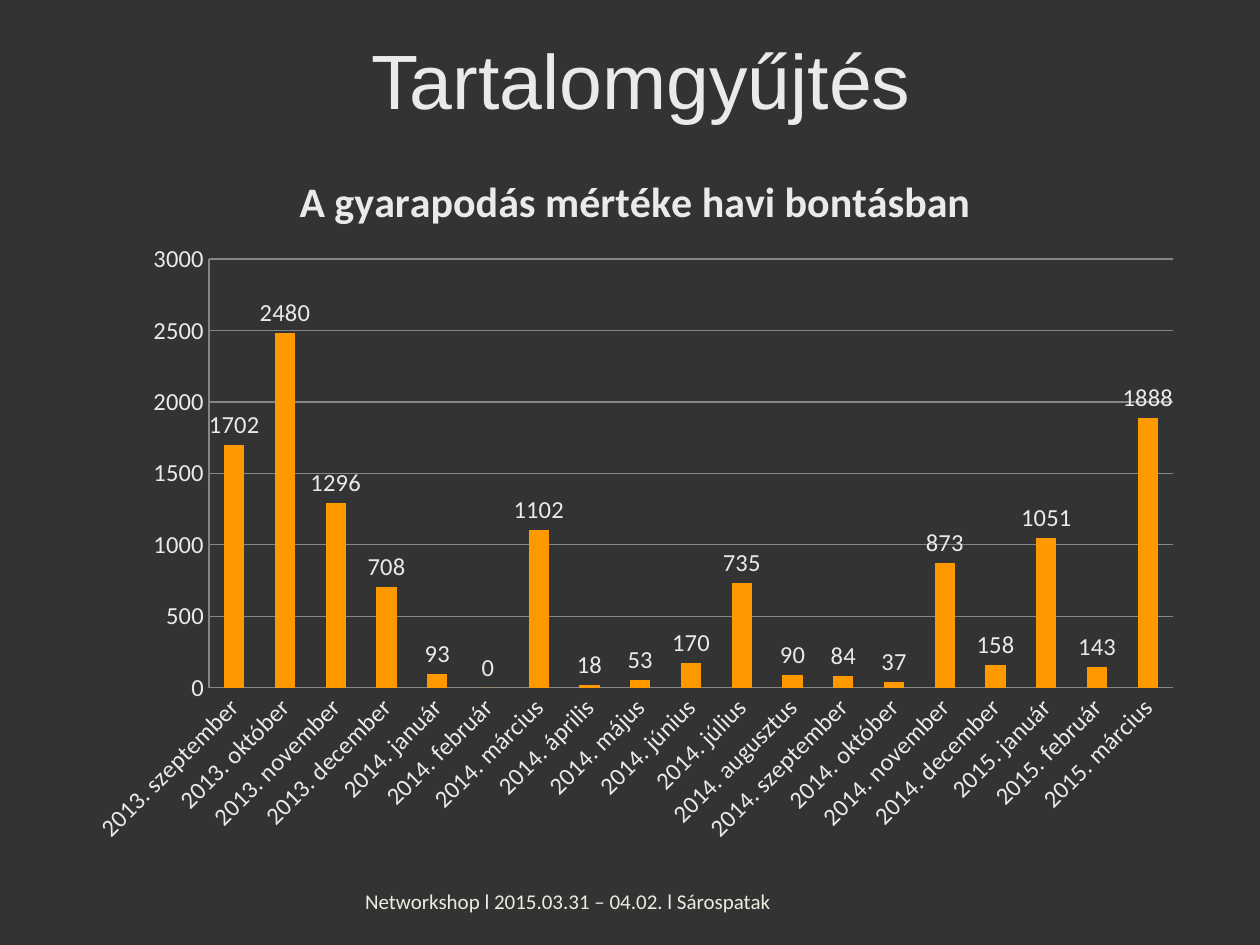
import pptx
import pptx.chart.data
import pptx.dml.color
import pptx.enum.chart
import pptx.enum.text
import pptx.oxml
import pptx.util
from pptx.dml.color import RGBColor
from pptx.util import Inches

BACKGROUND = RGBColor(0x33, 0x33, 0x33)
LIGHT = RGBColor(0xEA, 0xEA, 0xEA)
CREAM = RGBColor(0xEE, 0xEC, 0xE1)
ORANGE = RGBColor(0xFF, 0x99, 0x00)
GRAY = RGBColor(0x86, 0x86, 0x86)

TITLE = "Tartalomgyűjtés"
FOOTER = "Networkshop l 2015.03.31 – 04.02. l Sárospatak"
CHART_TITLE = "A gyarapodás mértéke havi bontásban"
MONTHLY_GROWTH = [
    ("2013. szeptember", 1702), ("2013. október", 2480),
    ("2013. november", 1296), ("2013. december", 708),
    ("2014. január", 93), ("2014. február", 0),
    ("2014. március", 1102), ("2014. április", 18),
    ("2014. május", 53), ("2014. június", 170),
    ("2014. július", 735), ("2014. augusztus", 90),
    ("2014. szeptember", 84), ("2014. október", 37),
    ("2014. november", 873), ("2014. december", 158),
    ("2015. január", 1051), ("2015. február", 143),
    ("2015. március", 1888),
]
PLOT_AREA = {"x": 0.12, "y": 0.16, "w": 0.86, "h": 0.6}


def style_font(font, size, color, name="Calibri", bold=False):
    font.size = pptx.util.Pt(size)
    font.color.rgb = color
    font.name = name
    font.bold = bold


def fill_text(shape, text, size, color, name, align):
    frame = shape.text_frame
    frame.word_wrap = True
    frame.vertical_anchor = pptx.enum.text.MSO_ANCHOR.MIDDLE
    para = frame.paragraphs[0]
    para.text = text
    para.alignment = align
    style_font(para.font, size, color, name)


def style_line(line):
    line.color.rgb = GRAY
    line.width = pptx.util.Pt(0.75)


def place_plot(chart):
    namespace = pptx.oxml.ns.nsdecls("c")
    parts = "".join(f'<c:{key}Mode val="edge"/>' for key in "xy")
    parts += "".join(f'<c:{key} val="{value}"/>' for key, value in PLOT_AREA.items())
    layout = pptx.oxml.parse_xml(
        f'<c:layout {namespace}><c:manualLayout><c:layoutTarget val="inner"/>'
        f"{parts}</c:manualLayout></c:layout>"
    )
    plot_area = chart.element.find(".//" + pptx.oxml.ns.qn("c:plotArea"))
    for old in plot_area.findall(pptx.oxml.ns.qn("c:layout")):
        plot_area.remove(old)
    plot_area.insert(0, layout)


def add_growth_chart(page):
    data = pptx.chart.data.CategoryChartData()
    data.categories = [month for month, count in MONTHLY_GROWTH]
    data.add_series("Series 1", [count for month, count in MONTHLY_GROWTH])
    chart = page.shapes.add_chart(
        pptx.enum.chart.XL_CHART_TYPE.COLUMN_CLUSTERED,
        Inches(0.59), Inches(1.15), Inches(8.9), Inches(5.67), data,
    ).chart
    style_font(chart.font, 14, LIGHT)
    chart.has_legend = False
    chart.has_title = True
    heading = chart.chart_title.text_frame.paragraphs[0]
    heading.text = CHART_TITLE
    style_font(heading.runs[0].font, 24, LIGHT, bold=True)
    chart.chart_title.include_in_layout = False

    for axis in (chart.category_axis, chart.value_axis):
        axis.major_tick_mark = pptx.enum.chart.XL_TICK_MARK.NONE
        axis.minor_tick_mark = pptx.enum.chart.XL_TICK_MARK.NONE
        style_font(axis.tick_labels.font, 14, LIGHT)
        style_line(axis.format.line)
    label_body = chart.category_axis._element.find(
        pptx.oxml.ns.qn("c:txPr")).find(pptx.oxml.ns.qn("a:bodyPr"))
    label_body.set("rot", str(-45 * 60000))
    label_body.set("vert", "horz")
    chart.value_axis.minimum_scale = 0
    chart.value_axis.maximum_scale = 3000
    chart.value_axis.major_unit = 500
    chart.value_axis.has_major_gridlines = True
    style_line(chart.value_axis.major_gridlines.format.line)

    plot = chart.plots[0]
    plot.gap_width = 150
    plot.vary_by_categories = False
    bars = plot.series[0]
    bars.invert_if_negative = False
    bars.format.fill.solid()
    bars.format.fill.fore_color.rgb = ORANGE
    labels = bars.data_labels
    labels.show_value = True
    labels.position = pptx.enum.chart.XL_LABEL_POSITION.OUTSIDE_END
    style_font(labels.font, 14, LIGHT)
    place_plot(chart)


def main():
    deck = pptx.Presentation()
    deck.slide_width, deck.slide_height = Inches(10), Inches(7.5)
    title_only, blank = deck.slide_layouts[5], deck.slide_layouts[6]
    page = deck.slides.add_slide(blank)
    page.background.fill.solid()
    page.background.fill.fore_color.rgb = BACKGROUND

    footer = page.shapes.add_textbox(
        Inches(2.8), Inches(6.95), Inches(3.94), Inches(0.4))
    fill_text(footer, FOOTER, 12, CREAM, "Calibri", pptx.enum.text.PP_ALIGN.LEFT)
    title = page.shapes.add_textbox(
        Inches(0.59), Inches(0), Inches(9), Inches(1.25))
    fill_text(title, TITLE, 44, LIGHT, "Arial", pptx.enum.text.PP_ALIGN.CENTER)
    add_growth_chart(page)
    deck.save("out.pptx")


if __name__ == "__main__":
    main()
